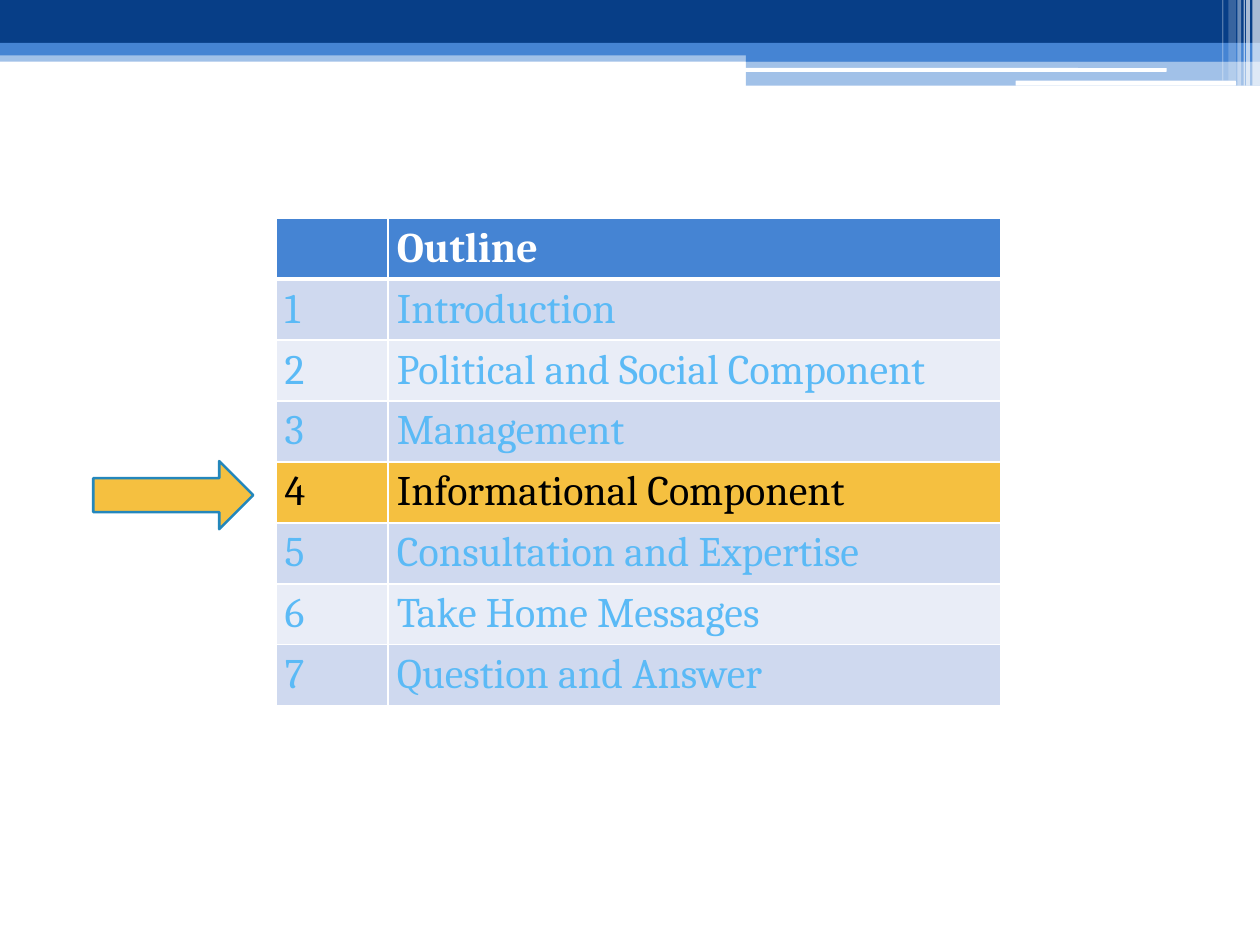
import pptx
import pptx.util
import pptx.oxml
import pptx.oxml.ns
import pptx.dml.color
import pptx.enum.shapes
from pptx.util import Inches, Pt

BLUE, NAVY, WHITE, GOLD = "4584D3", "073E87", "FFFFFF", "F5C040"
TEXT, BANDS = "5BBAF6", ("CFD9EF", "E9EDF7")
TOPICS = [
    "Introduction",
    "Political and Social Component",
    "Management",
    "Informational Component",
    "Consultation and Expertise",
    "Take Home Messages",
    "Question and Answer",
]
CURRENT = 4
BARS = [
    (0, 0.4, 10, 0.09, BLUE, 50),
    (0, 0, 10, 0.34, NAVY, 100),
    (0, 0.34, 10, 0.1, BLUE, 100),
    (5.92, 0.39, 4.08, 0.1, BLUE, 100),
    (5.92, 0.48, 4.08, 0.2, BLUE, 50),
]
RULES = [(5.91, 0.54, 3.35, 0.03), (8.06, 0.64, 1.75, 0.04)]
STRIPES = [
    (9.94, 0.06, 0.68, 65),
    (9.89, 0.03, 0.68, 65),
    (9.87, 0.01, 0.68, 60),
    (9.82, 0.03, 0.68, 40),
    (9.75, 0.06, 0.64, 20),
    (9.7, 0.01, 0.64, 30),
]
COLUMNS, ROW_HEIGHT = (0.89, 4.86), 0.48
MARGINS = dict(margin_left=0.07, margin_right=0.07, margin_top=0.05, margin_bottom=0.05)
SHAPE = pptx.enum.shapes.MSO_SHAPE


def paint(fmt, color, alpha=100):
    fmt.solid()
    fmt.fore_color.rgb = pptx.dml.color.RGBColor.from_string(color)
    if alpha < 100:
        clr = fmt._xPr.find(".//" + pptx.oxml.ns.qn("a:srgbClr"))
        clr.append(pptx.oxml.parse_xml(
            f'<a:alpha {pptx.oxml.ns.nsdecls("a")} val="{alpha * 1000}"/>'))


def add_shape(s, kind, box, color, alpha=100):
    sp = s.shapes.add_shape(kind, *map(Inches, box))
    sp.shadow.inherit = False
    paint(sp.fill, color, alpha)
    sp.line.fill.background()
    return sp


def set_borders(cell, widths):
    tcPr = cell._tc.get_or_add_tcPr()
    for i, (side, width) in enumerate(widths.items()):
        tcPr.insert(i, pptx.oxml.parse_xml(
            f'<a:ln{side} {pptx.oxml.ns.nsdecls("a")} w="{Pt(width)}">'
            f'<a:solidFill><a:srgbClr val="{WHITE}"/></a:solidFill></a:ln{side}>'))


def add_outline(s):
    rows = [("", "Outline")] + [(str(i), t) for i, t in enumerate(TOPICS, 1)]
    frame = s.shapes.add_table(len(rows), len(COLUMNS), Inches(2.19), Inches(1.73),
                               Inches(sum(COLUMNS)), Inches(ROW_HEIGHT * len(rows)))
    table = frame.table
    for column, width in zip(table.columns, COLUMNS):
        column.width = Inches(width)
    for i, row in enumerate(rows):
        table.rows[i].height = Inches(ROW_HEIGHT)
        if i == 0:
            fill, color = BLUE, WHITE
        elif i == CURRENT:
            fill, color = GOLD, "000000"
        else:
            fill, color = BANDS[(i - 1) % 2], TEXT
        for j, text in enumerate(row):
            cell = table.cell(i, j)
            for name, value in MARGINS.items():
                setattr(cell, name, Inches(value))
            paint(cell.fill, fill)
            set_borders(cell, dict(L=1, R=1, T=3 if i == 1 else 1, B=3 if i == 0 else 1))
            if text:
                r = cell.text_frame.paragraphs[0].add_run()
                r.text = text
                for name, value in dict(size=Pt(24), name="Cambria", bold=i == 0).items():
                    setattr(r.font, name, value)
                paint(r.font.fill, color)


def main():
    prs = pptx.Presentation()
    prs.slide_width, prs.slide_height = Inches(10), Inches(7.5)
    s = prs.slides.add_slide(prs.slide_layouts[6])
    for *box, color, alpha in BARS:
        add_shape(s, SHAPE.RECTANGLE, box, color, alpha)
    for box in RULES:
        add_shape(s, SHAPE.ROUNDED_RECTANGLE, box, WHITE)
    for left, width, height, alpha in STRIPES:
        add_shape(s, SHAPE.RECTANGLE, (left, 0, width, height), WHITE, alpha)
    add_outline(s)
    arrow = add_shape(s, SHAPE.RIGHT_ARROW, (0.74, 3.66, 1.27, 0.54), GOLD)
    paint(arrow.line.fill, "2487BB")
    arrow.line.width = Pt(1.5)
    prs.save("out.pptx")


if __name__ == "__main__":
    main()
